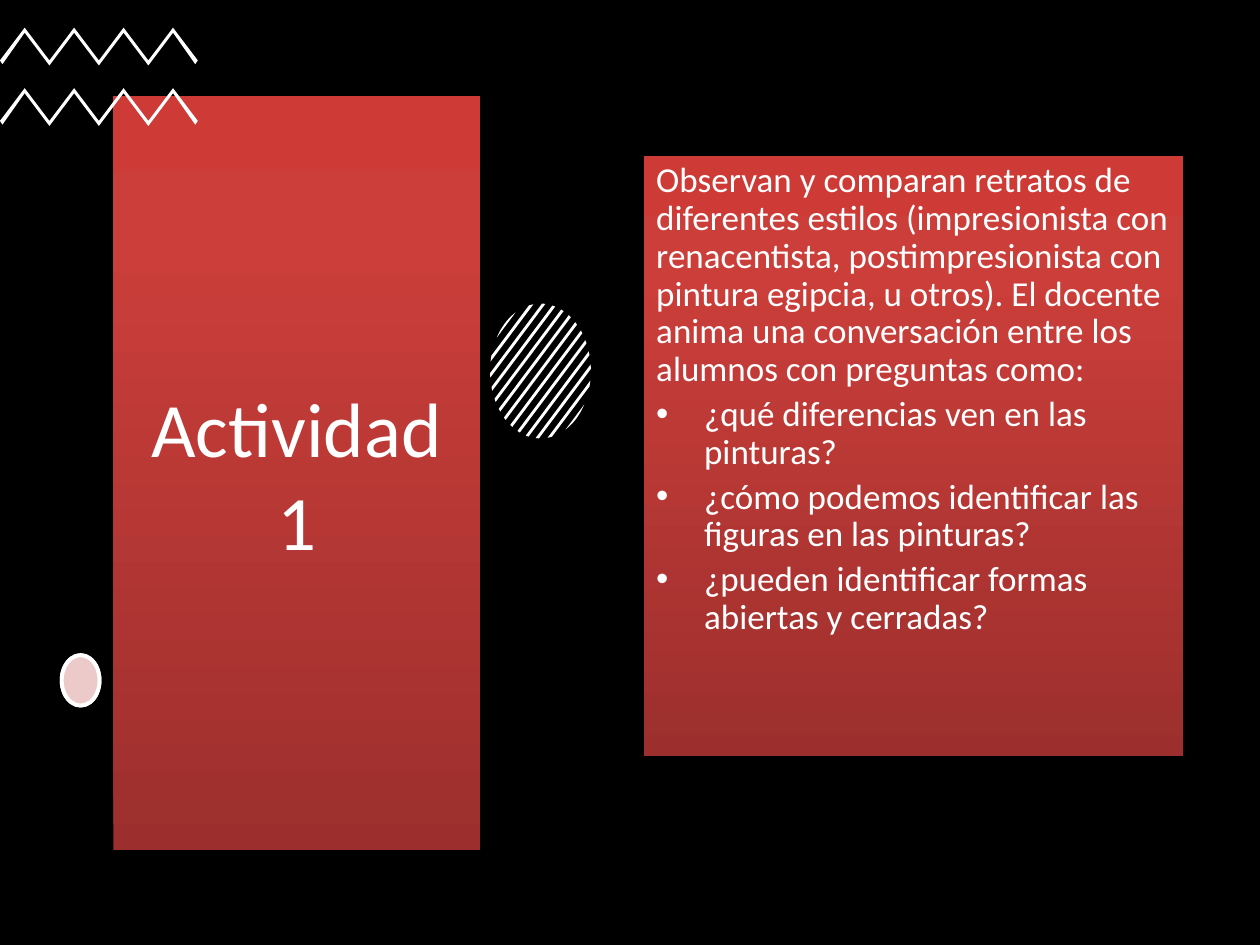
from copy import deepcopy
from dataclasses import dataclass
from math import acos, cos, pi, sin
from typing import Any, Optional

from lxml.etree import SubElement
from pptx import Presentation
from pptx.dml.color import RGBColor
from pptx.enum.shapes import MSO_SHAPE
from pptx.enum.text import MSO_ANCHOR, PP_ALIGN
from pptx.oxml.ns import qn
from pptx.util import Pt

PX = 9144  # EMU in one px, 100 px to the inch
BLACK = RGBColor(0x00, 0x00, 0x00)
WHITE = RGBColor(0xFF, 0xFF, 0xFF)
ROSE = RGBColor(0xC0, 0x50, 0x4D)
PANEL_STOPS = (
    (0, RGBColor(0x9C, 0x2F, 0x2D)),
    (0.8, RGBColor(0xCB, 0x3E, 0x3A)),
    (1, RGBColor(0xCE, 0x3B, 0x37)),
)
TITLE_FONT = {"name": "Calibri", "size": Pt(44)}
BODY_FONT = {"name": "Calibri", "size": Pt(20)}
TITLE_FORMAT = {"alignment": PP_ALIGN.CENTER}
BODY_FORMAT = {"alignment": PP_ALIGN.LEFT, "line_spacing": 0.9, "space_before": Pt(4)}
BULLET_INDENT = 38


@dataclass(frozen=True)
class Area:
    left: int
    top: int
    width: int
    height: int

    def emu(self) -> list[int]:
        return [n * PX for n in (self.left, self.top, self.width, self.height)]


@dataclass(frozen=True)
class Line:
    text: str
    bullet: bool = False


@dataclass(frozen=True)
class Panel:
    area: Area
    lines: tuple[Line, ...]
    anchor: MSO_ANCHOR
    font: dict[str, Any]
    format: dict[str, Any]


SLIDE = Area(0, 0, 1000, 750)
ZIGZAGS = (Area(0, 22, 157, 30), Area(0, 70, 157, 30))
ZIGZAG_LEGS = 8
HATCHED_OVAL = Area(389, 241, 80, 107)
STRIPES = 13
STRIPE_GAP = 0.165  # in radii of the oval
STRIPE_HALF = 0.025
DOT = Area(49, 520, 30, 40)
TITLE = Panel(Area(90, 76, 291, 599), (Line("Actividad 1"),),
              MSO_ANCHOR.MIDDLE, TITLE_FONT, TITLE_FORMAT)
BODY = Panel(
    Area(511, 124, 428, 476),
    (
        Line("Observan y comparan retratos de diferentes estilos (impresionista con "
             "renacentista, postimpresionista con pintura egipcia, u otros). El docente "
             "anima una conversación entre los alumnos con preguntas como:"),
        Line("¿qué diferencias ven en las pinturas?", True),
        Line("¿cómo podemos identificar las figuras en las pinturas?", True),
        Line("¿pueden identificar formas abiertas y cerradas?", True),
    ),
    MSO_ANCHOR.TOP, BODY_FONT, BODY_FORMAT,
)


def apply(target: Any, values: dict[str, Any]) -> None:
    for name, value in values.items():
        setattr(target, name, value)


def paint(shape: Any, color: RGBColor, alpha: Optional[int] = None) -> None:
    """Fill without line or shadow; alpha is a percentage."""
    shape.shadow.inherit = False
    shape.fill.solid()
    shape.fill.fore_color.rgb = color
    shape.line.fill.background()
    if alpha is not None:
        color_element = shape.fill._xPr.find(".//" + qn("a:srgbClr"))
        SubElement(color_element, qn("a:alpha"), val=str(alpha * 1000))


def paint_gradient(shape: Any) -> None:
    shape.shadow.inherit = False
    shape.line.fill.background()
    shape.fill.gradient()
    shape.fill.gradient_angle = 90
    stop_list = shape._element.spPr.find(".//" + qn("a:gsLst"))
    stop_list.append(deepcopy(stop_list[0]))
    for stop, (position, color) in zip(shape.fill.gradient_stops, PANEL_STOPS):
        stop.position = position
        stop.color.rgb = color


def add_bullet(para: Any) -> None:
    properties = para._p.get_or_add_pPr()
    properties.set("marL", str(BULLET_INDENT * PX))
    properties.set("indent", str(-BULLET_INDENT * PX))
    SubElement(properties, qn("a:buFont"), typeface="Arial")
    SubElement(properties, qn("a:buChar"), char="•")


def draw_panel(shapes: Any, panel: Panel) -> None:
    box = shapes.add_shape(MSO_SHAPE.RECTANGLE, *panel.area.emu())
    paint_gradient(box)
    frame = box.text_frame
    apply(frame, {"word_wrap": True, "vertical_anchor": panel.anchor})
    for index, line in enumerate(panel.lines):
        para = frame.add_paragraph() if index else frame.paragraphs[0]
        apply(para, panel.format)
        if line.bullet:
            add_bullet(para)
        span = para.add_run()
        span.text = line.text
        apply(span.font, panel.font)
        span.font.color.rgb = WHITE


def draw_polygon(shapes: Any, points: list[tuple[float, float]]) -> None:
    corners = [(round(x * PX), round(y * PX)) for x, y in points]
    builder = shapes.build_freeform(*corners[0])
    builder.add_line_segments(corners[1:], close=True)
    paint(builder.convert_to_shape(), WHITE)


def draw_zigzag(shapes: Any, area: Area) -> None:
    leg, rise, thick = area.width / ZIGZAG_LEGS, area.height - 4, 4
    upper = [(area.left + i * leg, area.top + (rise if i % 2 == 0 else 0))
             for i in range(ZIGZAG_LEGS + 1)]
    lower = [(x, y + thick) for x, y in reversed(upper)]
    # The two ends are cut square to the stroke.
    (right, low), (left, _) = lower[0], lower[-1]
    lower[0], lower[-1] = (right - 2, low - 1), (left + 2, low - 1)
    draw_polygon(shapes, upper + lower)


def draw_hatched_oval(shapes: Any, area: Area) -> None:
    """Diagonal bands of an ellipse, each ending on the outline."""
    steps = 6
    radius_x, radius_y = area.width / 2, area.height / 2
    for index in range(STRIPES):
        center = (index - STRIPES // 2) * STRIPE_GAP
        start, end = (acos(max(-1, min(1, center + side)))
                      for side in (-STRIPE_HALF, STRIPE_HALF))
        arc = [start + (end - start) * i / steps for i in range(steps + 1)]
        turns = arc + [-angle for angle in reversed(arc)]
        draw_polygon(shapes, [
            (area.left + radius_x * (1 + cos(pi / 4 + turn)),
             area.top + radius_y * (1 + sin(pi / 4 + turn)))
            for turn in turns
        ])


def draw_dot(shapes: Any, color: RGBColor, alpha: Optional[int] = None) -> None:
    dot = shapes.add_shape(MSO_SHAPE.OVAL, *DOT.emu())
    paint(dot, color, alpha)
    dot.line.color.rgb = WHITE
    dot.line.width = Pt(2.25)


def main() -> None:
    deck = Presentation()
    deck.slide_width, deck.slide_height = SLIDE.emu()[2:]
    shapes = deck.slides.add_slide(deck.slide_layouts[6]).shapes
    paint(shapes.add_shape(MSO_SHAPE.RECTANGLE, *SLIDE.emu()), BLACK)
    draw_panel(shapes, TITLE)
    zigzag_group = shapes.add_group_shape()
    for area in ZIGZAGS:
        draw_zigzag(zigzag_group.shapes, area)
    draw_hatched_oval(shapes.add_group_shape().shapes, HATCHED_OVAL)
    draw_dot(shapes, WHITE)
    draw_dot(shapes, ROSE, 30)
    draw_panel(shapes, BODY)
    deck.save("out.pptx")


if __name__ == "__main__":
    main()
